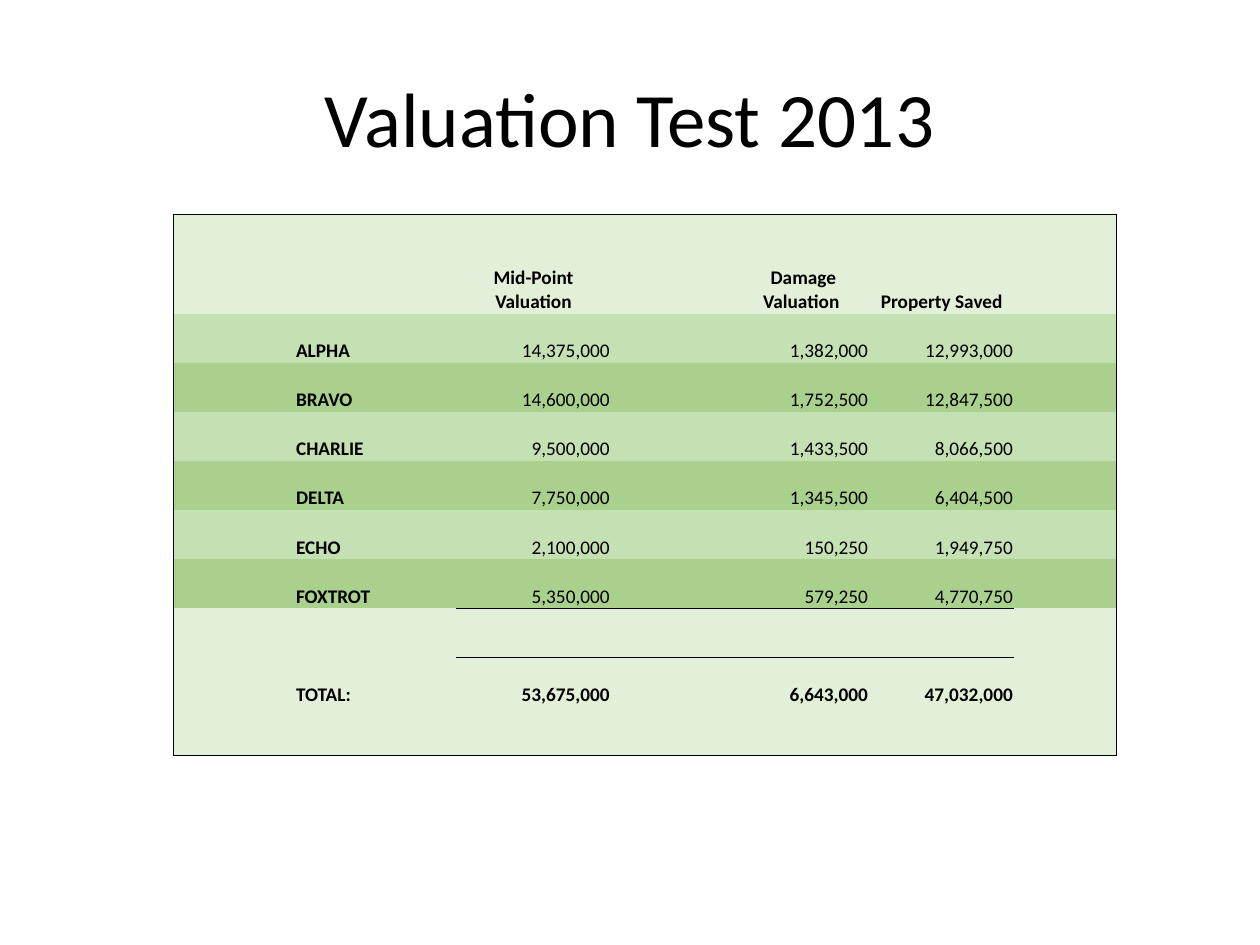
from dataclasses import dataclass
from typing import Any

from lxml import etree
from pptx import Presentation
from pptx.dml.color import RGBColor
from pptx.enum.text import MSO_ANCHOR, PP_ALIGN
from pptx.oxml.ns import qn
from pptx.util import Inches, Pt

LEFT, CENTER, RIGHT = PP_ALIGN.LEFT, PP_ALIGN.CENTER, PP_ALIGN.RIGHT
MIDDLE, BOTTOM = MSO_ANCHOR.MIDDLE, MSO_ANCHOR.BOTTOM
BLACK = RGBColor(0x00, 0x00, 0x00)
PALE = RGBColor(0xE2, 0xEF, 0xD9)
LIGHT = RGBColor(0xC5, 0xE0, 0xB2)
GREEN = RGBColor(0xA9, 0xD1, 0x8D)
PLAIN_TABLE = "{2D5ABB26-0587-4C30-8999-92F81FD0307C}"

WIDTHS = [0.96, 1.28, 1.23, 0.97, 1.08, 1.15, 0.81]
HEIGHTS = [0.79] + [0.39] * 9
FILLS = [PALE] + [LIGHT, GREEN] * 3 + [PALE] * 3
TEXT_COLUMNS = [1, 2, 4, 5]
HEADER_ROW, LAST_UNIT_ROW, TOTAL_ROW = 0, 6, 8
VALUATIONS = {
    0: ["", "Mid-Point Valuation", " Damage Valuation", "Property Saved"],
    1: ["ALPHA", "14,375,000", "1,382,000", "12,993,000"],
    2: ["BRAVO", "14,600,000", "1,752,500", "12,847,500"],
    3: ["CHARLIE", "9,500,000", "1,433,500", "8,066,500"],
    4: ["DELTA", "7,750,000", "1,345,500", "6,404,500"],
    5: ["ECHO", "2,100,000", "150,250", "1,949,750"],
    6: ["FOXTROT", "5,350,000", "579,250", "4,770,750"],
    8: ["TOTAL:", "53,675,000", "6,643,000", "47,032,000"],
}


def write(frame, text, size=11, bold=False, align=LEFT, color=BLACK, font="Calibri"):
    para = frame.paragraphs[0]
    para.alignment = align
    span = para.add_run()
    span.text = text
    span.font.name = font
    span.font.size = Pt(size)
    span.font.bold = bold
    span.font.color.rgb = color


def cell_borders(row, column):
    """Return the sides that belong to the outer frame or the sum line."""
    last_row, last_column = len(HEIGHTS) - 1, len(WIDTHS) - 1
    summed = 2 <= column <= 5
    rules = {
        "L": column == 0,
        "R": column == last_column,
        "T": row == 0 or (summed and row == LAST_UNIT_ROW + 1),
        "B": row == last_row or (summed and row == LAST_UNIT_ROW),
    }
    return [side for side, drawn in rules.items() if drawn]


@dataclass
class ValuationSlide:
    """Holds the border style and the current slide."""

    page: Any
    border_width: float = 0.5
    border_color: RGBColor = BLACK

    def title(self, text, left, top, width, height):
        box = self.page.shapes.add_textbox(
            Inches(left), Inches(top), Inches(width), Inches(height))
        box.text_frame.word_wrap = True
        box.text_frame.vertical_anchor = MIDDLE
        write(box.text_frame, text, size=44, align=CENTER)

    def border(self, cell, side):
        properties = cell._tc.get_or_add_tcPr()
        line = etree.SubElement(
            properties, qn(f"a:ln{side}"), w=str(Pt(self.border_width)))
        fill = etree.SubElement(line, qn("a:solidFill"))
        etree.SubElement(fill, qn("a:srgbClr"), val=str(self.border_color))

    def cell(self, cell, row, column):
        cell.margin_left = cell.margin_right = cell.margin_top = Inches(0.01)
        cell.margin_bottom = 0
        cell.vertical_anchor = BOTTOM
        for side in cell_borders(row, column):
            self.border(cell, side)
        cell.fill.solid()
        cell.fill.fore_color.rgb = FILLS[row]

    def table(self, left, top):
        frame = self.page.shapes.add_table(
            len(HEIGHTS), len(WIDTHS), Inches(left), Inches(top),
            Inches(sum(WIDTHS)), Inches(sum(HEIGHTS)))
        table = frame.table
        table.first_row = table.horz_banding = False
        table._tbl.tblPr.find(qn("a:tableStyleId")).text = PLAIN_TABLE
        for column, width in zip(table.columns, WIDTHS):
            column.width = Inches(width)
        for row, height in zip(table.rows, HEIGHTS):
            row.height = Inches(height)
        for row in range(len(HEIGHTS)):
            for column in range(len(WIDTHS)):
                self.cell(table.cell(row, column), row, column)
        for row, texts in VALUATIONS.items():
            for column, text in zip(TEXT_COLUMNS, texts):
                if text:
                    label = column == TEXT_COLUMNS[0]
                    align = CENTER if row == HEADER_ROW else LEFT if label else RIGHT
                    write(table.cell(row, column).text_frame, text, align=align,
                          bold=label or row in (HEADER_ROW, TOTAL_ROW))


def main():
    deck = Presentation()
    deck.slide_width, deck.slide_height = Inches(10), Inches(7.5)
    slide = ValuationSlide(deck.slides.add_slide(deck.slide_layouts[6]))
    slide.title("Valuation Test 2013", 0.5, 0.3, 9, 1.25)
    slide.table(1.38, 1.7)
    deck.save("out.pptx")


if __name__ == "__main__":
    main()
